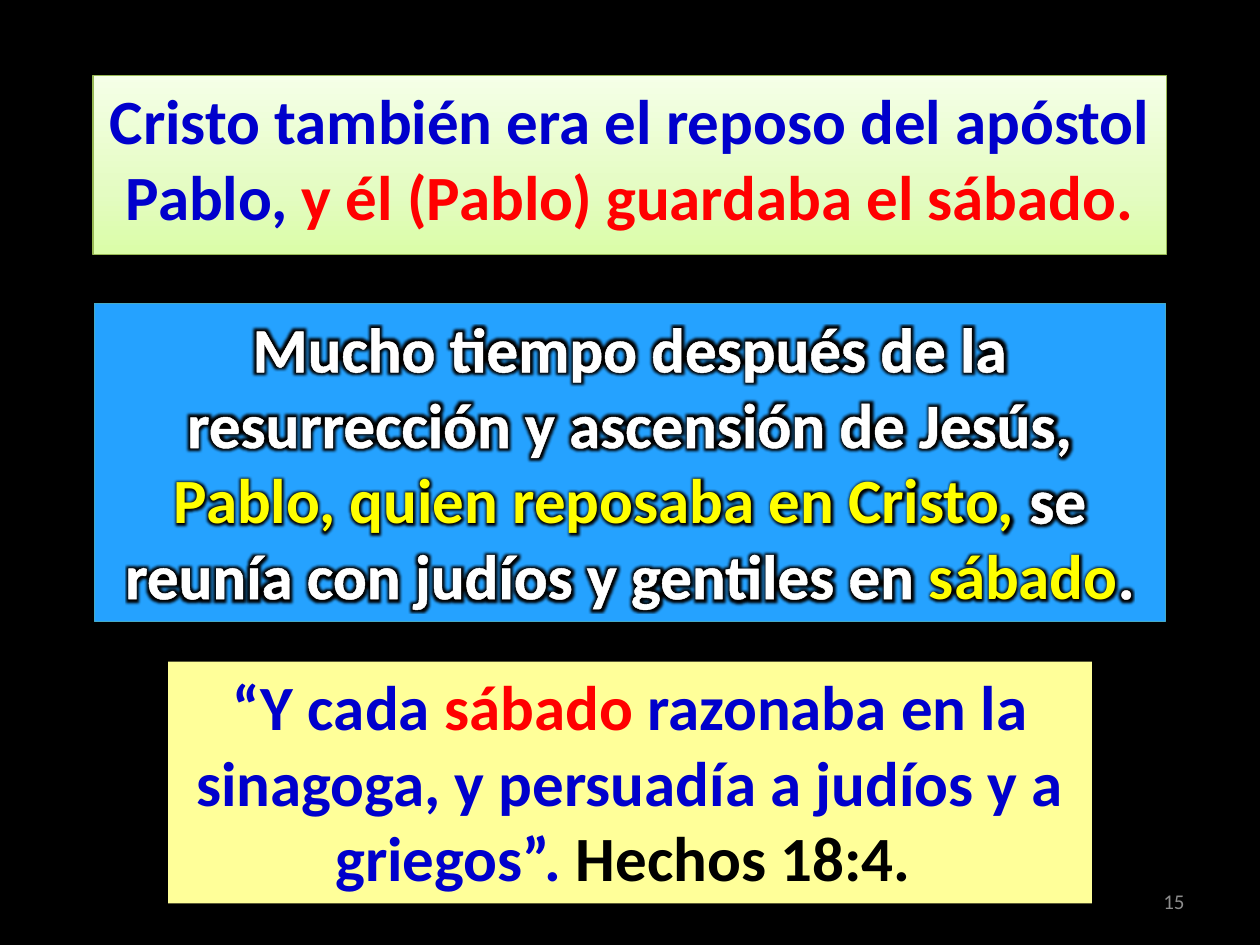
from copy import deepcopy

from lxml.etree import SubElement
from pptx import Presentation
from pptx.dml.color import RGBColor
from pptx.enum.shapes import MSO_SHAPE
from pptx.enum.text import MSO_ANCHOR, PP_ALIGN
from pptx.oxml.ns import qn
from pptx.util import Pt

HEX = {
    "black": "000000", "white": "FFFFFF", "blue": "0000CC", "red": "FF0000",
    "yellow": "FFFF00", "sky": "25A2FF", "cream": "FFFF99", "grey": "8C8C8C",
    "leaf": "98B955", "teal": "46AAC5",
    "lime": "DAFDA7", "mint": "E4FCC2", "pale": "F5FFE7",
}
FONT = "Calibri"
WIDE, HIGH = 720, 540

# Each panel is centred across the slide.
PANELS = [
    {"top": 43.2, "size": (613.6, 102.2), "edge": "leaf", "shade": 38,
     "fill": [("lime", 0), ("mint", 0.35), ("pale", 1)], "halo": "shadow",
     "runs": [("Cristo también era el reposo del apóstol Pablo, ", "blue"),
              ("y él (Pablo) guardaba el sábado.", "red")]},
    {"top": 173.3, "size": (612, 181.8), "edge": "teal", "shade": 38,
     "fill": "sky", "halo": "glow",
     "runs": [("Mucho tiempo después de la resurrección y ascensión de Jesús, ",
               "white"),
              ("Pablo, quien reposaba en Cristo,", "yellow"),
              (" se reunía con judíos y gentiles en ", "white"),
              ("sábado", "yellow"), (".", "white")]},
    {"top": 378, "size": (528, 138.2), "edge": None, "shade": 35,
     "fill": "cream", "halo": "shadow",
     "runs": [("“Y cada ", "blue"), ("sábado ", "red"),
              ("razonaba en la sinagoga, y persuadía a judíos y a griegos”. ",
               "blue"),
              ("Hechos 18:4. ", "black")]},
]
PAGE = ("15", 516.2, 500.5, 167.8, 28.8)


def rgb(name):
    return RGBColor.from_string(HEX[name])


def tint(node, name, alpha=100):
    color = SubElement(node, qn("a:srgbClr"), val=HEX[name])
    if alpha < 100:
        SubElement(color, qn("a:alpha"), val=str(alpha * 1000))


def shadow(effects, name, alpha, blur, dist, angle):
    node = SubElement(effects, qn("a:outerShdw"), blurRad=str(Pt(blur)),
                      dist=str(Pt(dist)), dir=str(angle * 60000),
                      rotWithShape="0")
    tint(node, name, alpha)


def blend(shape, stops):
    """Fill from bottom to top through the given stops."""
    fill = shape.fill
    fill.gradient()
    fill.gradient_angle = 90
    first = next(shape._element.iter(qn("a:gs")))
    for _ in stops[2:]:
        first.addnext(deepcopy(first))
    for stop, (name, place) in zip(fill.gradient_stops, stops):
        stop.color.rgb = rgb(name)
        stop.position = place


def add_run(par, text, name, size, bold=False):
    run = par.add_run()
    run.text = text
    font = run.font
    font.name, font.size, font.bold = FONT, Pt(size), bold
    font.color.rgb = rgb(name)
    return run


def adorn(run, name, halo):
    """Outline the letters and set a glow or shadow round them."""
    props = run._r.get_or_add_rPr()
    line = SubElement(props, qn("a:ln"), w=str(Pt(0.75)))
    tint(SubElement(line, qn("a:solidFill")), name)
    effects = SubElement(props, qn("a:effectLst"))
    if halo == "glow":
        tint(SubElement(effects, qn("a:glow"), rad=str(Pt(5))), "black")
    else:
        shadow(effects, "blue", 60, 4, 3, 45)
    props.insert(0, effects)
    fill = props.find(qn("a:solidFill"))
    props.insert(0, fill)
    props.insert(0, line)


def add_panel(slide, top, size, edge, shade, fill, halo, runs):
    wide, high = size
    box = slide.shapes.add_shape(MSO_SHAPE.RECTANGLE, Pt((WIDE - wide) / 2),
                                 Pt(top), Pt(wide), Pt(high))
    if isinstance(fill, list):
        blend(box, fill)
    else:
        box.fill.solid()
        box.fill.fore_color.rgb = rgb(fill)
    if edge:
        box.line.color.rgb = rgb(edge)
        box.line.width = Pt(0.75)
    else:
        box.line.fill.background()
    box.shadow.inherit = False
    effects = box._element.spPr.find(qn("a:effectLst"))
    shadow(effects, "black", shade, 3.1, 1.7, 90)
    frame = box.text_frame
    frame.word_wrap = True
    frame.vertical_anchor = MSO_ANCHOR.TOP
    par = frame.paragraphs[0]
    par.alignment = PP_ALIGN.CENTER
    for text, name in runs:
        adorn(add_run(par, text, name, 36, True), name, halo)


def add_page(slide, text, *place):
    frame = slide.shapes.add_textbox(*map(Pt, place)).text_frame
    frame.word_wrap = True
    frame.vertical_anchor = MSO_ANCHOR.MIDDLE
    par = frame.paragraphs[0]
    par.alignment = PP_ALIGN.RIGHT
    add_run(par, text, "grey", 12)


def main():
    deck = Presentation()
    deck.slide_width, deck.slide_height = Pt(WIDE), Pt(HIGH)
    slide = deck.slides.add_slide(deck.slide_layouts[6])
    back = slide.background.fill
    back.solid()
    back.fore_color.rgb = rgb("black")
    for panel in PANELS[:2]:
        add_panel(slide, **panel)
    add_page(slide, *PAGE)
    add_panel(slide, **PANELS[2])
    deck.save("out.pptx")


if __name__ == "__main__":
    main()
